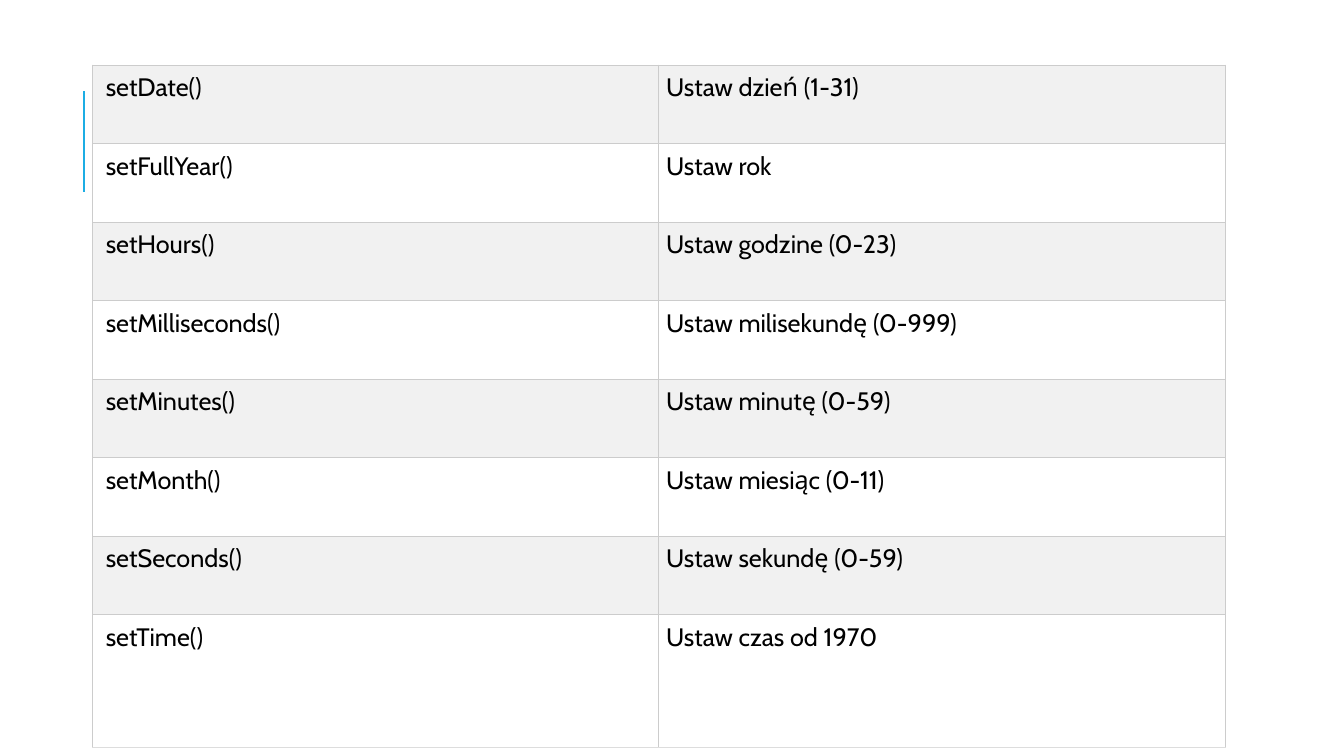
from lxml.etree import SubElement
from pptx import Presentation
from pptx.dml.color import RGBColor
from pptx.enum.shapes import MSO_CONNECTOR as Connector
from pptx.oxml.ns import qn
from pptx.util import Pt

METHODS = [
    ("setDate()", "Ustaw dzień (1-31)"),
    ("setFullYear()", "Ustaw rok"),
    ("setHours()", "Ustaw godzine (0-23)"),
    ("setMilliseconds()", "Ustaw milisekundę (0-999)"),
    ("setMinutes()", "Ustaw minutę (0-59)"),
    ("setMonth()", "Ustaw miesiąc (0-11)"),
    ("setSeconds()", "Ustaw sekundę (0-59)"),
    ("setTime()", "Ustaw czas od 1970"),
]
COLUMN_WIDTH = 404.6
ROW_HEIGHTS = [56.1] * (len(METHODS) - 1) + [95]


def color(value):
    return RGBColor.from_string(value)


def write(frame, text, font="Cabin", size=18, ink="000000"):
    span = frame.paragraphs[0].add_run()
    span.text = text
    span.font.name = font
    span.font.size = Pt(size)
    span.font.color.rgb = color(ink)


class Page:
    accent = "1CADE4"
    bands = ("F1F1F1", "FFFFFF")
    border = "CCCCCC"
    last_border = "DDDDDD"
    border_width = 0.6
    padding = 5.2
    first_padding = 9.6

    def __init__(self, deck):
        self.slide = deck.slides.add_slide(deck.slide_layouts[6])

    def line(self, x1, y1, x2, y2, width):
        line = self.slide.shapes.add_connector(
            Connector.STRAIGHT, Pt(x1), Pt(y1), Pt(x2), Pt(y2))
        line.line.color.rgb = color(self.accent)
        line.line.width = Pt(width)
        SubElement(line._element.spPr, qn("a:effectLst"))

    def cell_borders(self, cell, bottom):
        properties = cell._tc.get_or_add_tcPr()
        sides = {"L": self.border, "R": self.border, "T": self.border, "B": bottom}
        for side, value in sides.items():
            edge = SubElement(properties, qn(f"a:ln{side}"), w=str(Pt(self.border_width)))
            fill = SubElement(edge, qn("a:solidFill"))
            SubElement(fill, qn("a:srgbClr"), val=value)

    def table(self, left, top, rows, column_width, heights):
        columns = len(rows[0])
        table = self.slide.shapes.add_table(
            len(rows), columns, Pt(left), Pt(top),
            Pt(column_width * columns), Pt(sum(heights))).table
        for column in table.columns:
            column.width = Pt(column_width)
        for r, (texts, height) in enumerate(zip(rows, heights)):
            table.rows[r].height = Pt(height)
            bottom = self.last_border if r == len(rows) - 1 else self.border
            for c, text in enumerate(texts):
                cell = table.cell(r, c)
                cell.margin_left = Pt(self.padding if c else self.first_padding)
                cell.margin_right = cell.margin_top = cell.margin_bottom = Pt(self.padding)
                self.cell_borders(cell, bottom)
                cell.fill.solid()
                cell.fill.fore_color.rgb = color(self.bands[r % 2])
                write(cell.text_frame, text)


def main():
    deck = Presentation()
    deck.slide_width, deck.slide_height = Pt(960), Pt(540)
    page = Page(deck)
    page.line(60, 136.8, 60, 64.8, width=1.5)
    page.table(66, 46.5, METHODS, COLUMN_WIDTH, ROW_HEIGHTS)
    deck.save("out.pptx")


if __name__ == "__main__":
    main()
